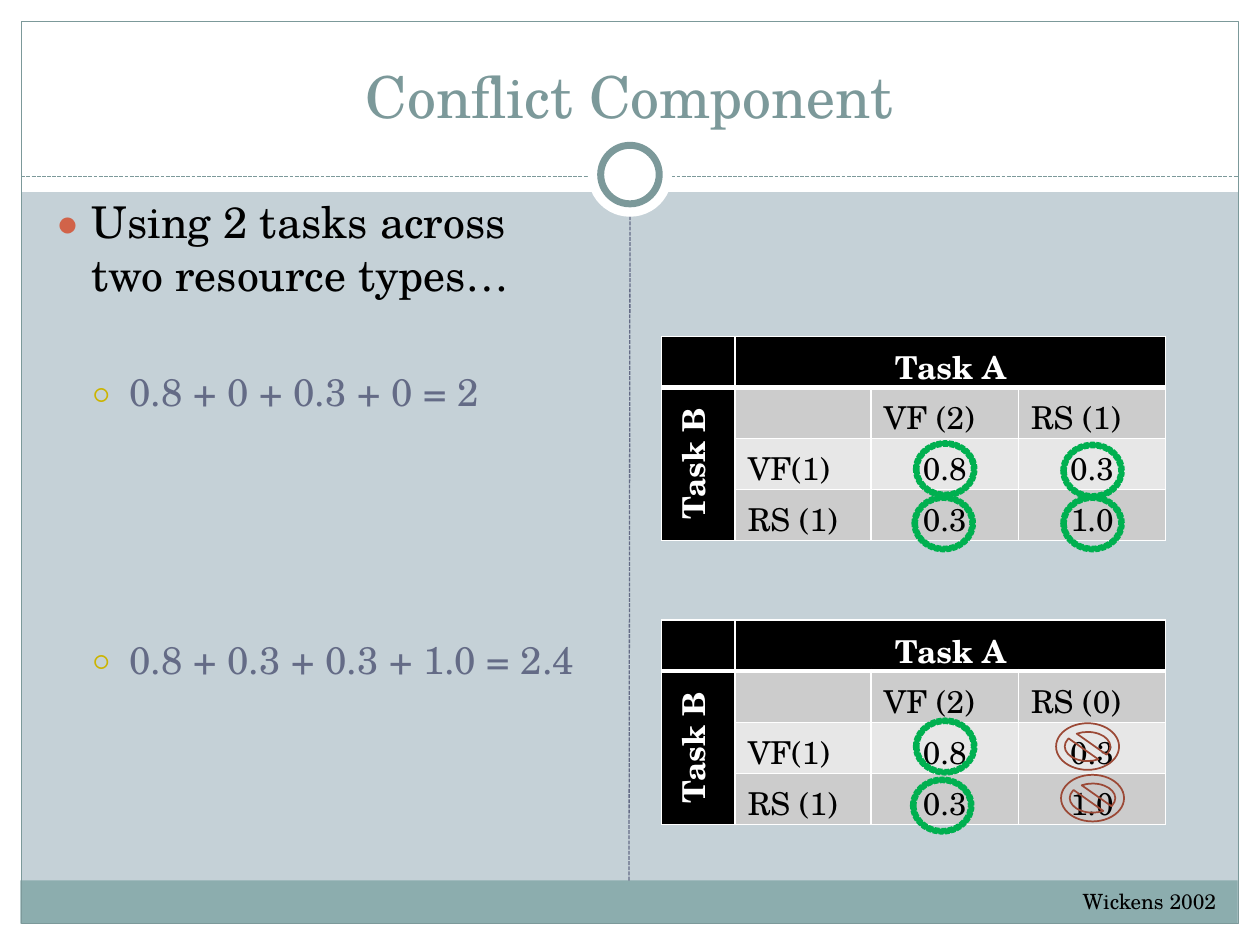
from lxml import etree
from pptx import Presentation
from pptx.dml.color import RGBColor
from pptx.enum.dml import MSO_LINE
from pptx.enum.shapes import MSO_CONNECTOR, MSO_SHAPE
from pptx.enum.text import MSO_ANCHOR, PP_ALIGN
from pptx.oxml.ns import qn
from pptx.util import Cm, Pt

RECT, OVAL = MSO_SHAPE.RECTANGLE, MSO_SHAPE.OVAL
DONUT, NO_SIGN = MSO_SHAPE.DONUT, MSO_SHAPE.NO_SYMBOL
STRAIGHT, DASH = MSO_CONNECTOR.STRAIGHT, MSO_LINE.SQUARE_DOT
LEFT, CENTER, RIGHT = PP_ALIGN.LEFT, PP_ALIGN.CENTER, PP_ALIGN.RIGHT
TOP, BOTTOM = MSO_ANCHOR.TOP, MSO_ANCHOR.BOTTOM

FONT = "TeX Gyre Schola"
COLORS = {
    "back": "C5D1D7", "white": "FFFFFF", "black": "000000",
    "teal": "7C999A", "footer": "8CADAE", "slate": "646B86",
    "orange": "D16349", "gold": "CCB400", "green": "00B050",
    "brown": "9B4936", "dark_band": "CCCCCC", "light_band": "E7E7E7",
}
RGB = {name: RGBColor.from_string(value) for name, value in COLORS.items()}


def add_text(p, text, size=18, color="black", bold=False, align=LEFT, before=0):
    p.alignment = align
    p.space_before = Pt(before)
    r = p.add_run()
    r.text = text
    r.font.name = FONT
    r.font.size = Pt(size)
    r.font.bold = bold
    r.font.color.rgb = RGB[color]


def add_figure(kind, x, y, w, h, fill=None, line=None, width=1, dash=None):
    sp = s.shapes.add_shape(kind, Cm(x), Cm(y), Cm(w), Cm(h))
    sp.shadow.inherit = False
    if fill:
        sp.fill.solid()
        sp.fill.fore_color.rgb = RGB[fill]
    else:
        sp.fill.background()
    if line:
        sp.line.color.rgb = RGB[line]
        sp.line.width = Pt(width)
        sp.line.dash_style = dash
    else:
        sp.line.fill.background()
    return sp


prs = Presentation()
prs.slide_width, prs.slide_height = Cm(25.4), Cm(19.05)
s = prs.slides.add_slide(prs.slide_layouts[6])
s.background.fill.solid()
s.background.fill.fore_color.rgb = RGB["back"]

for x, y, w, h in [(0, 18.62, 25.4, 0.43), (0, 0, 25.4, 3.87),
                   (0, 0, 0.43, 19.05), (24.97, 0, 0.43, 19.05)]:
    add_figure(RECT, x, y, w, h, fill="white")
footer = add_figure(RECT, 0.41, 17.75, 24.54, 0.87, fill="footer")
add_figure(RECT, 0.43, 0.43, 24.54, 18.19, line="teal", width=0.75)

rule = s.shapes.add_connector(STRAIGHT, Cm(0.43), Cm(3.56), Cm(24.97), Cm(3.56))
add_figure(OVAL, 11.85, 2.67, 1.7, 1.7, fill="white")
add_figure(OVAL, 12.11, 2.93, 1.18, 1.18, fill="white", line="teal", width=4)
divider = s.shapes.add_connector(STRAIGHT, Cm(12.68), Cm(17.75), Cm(12.7), Cm(4.37))
divider.begin_connect(footer, 0)
for line, color in [(rule, "teal"), (divider, "slate")]:
    line.line.color.rgb = RGB[color]
    line.line.width = Pt(0.75)
    line.line.dash_style = DASH
    etree.SubElement(line._element.spPr, qn("a:effectLst"))

frames = []
for x, y, w, h, anchor in [(0.84, 0.64, 23.7, 2.11, BOTTOM),
                           (0.84, 3.81, 11.23, 13, TOP),
                           (21.39, 17.78, 3.38, 0.76, TOP)]:
    tf = s.shapes.add_textbox(Cm(x), Cm(y), Cm(w), Cm(h)).text_frame
    tf.word_wrap = True
    tf.vertical_anchor = anchor
    frames.append(tf)
title, body, credit = frames
add_text(title.paragraphs[0], "Conflict Component", size=33, color="teal", align=CENTER)
add_text(credit.paragraphs[0], "Wickens 2002", size=12, align=RIGHT)

bullets = [
    ("Using 2 tasks across two resource types…", 25, "black", 0, 0, "●", "orange", 85),
    ("0.8 + 0 + 0.3 + 0 = 2", 22, "slate", 39, 1, "○", "gold", 70),
    ("0.8 + 0.3 + 0.3 + 1.0 = 2.4", 22, "slate", 126.5, 1, "○", "gold", 70),
]
for i, (text, size, color, before, level, mark, mark_color, scale) in enumerate(bullets):
    p = body.add_paragraph() if i else body.paragraphs[0]
    add_text(p, text, size=size, color=color, before=before)
    p.level = level
    pPr = p._p.get_or_add_pPr()
    pPr.set("marL", str(Cm(0.76 * (level + 1))))
    pPr.set("indent", str(-Cm(0.76)))
    buClr = etree.SubElement(pPr, qn("a:buClr"))
    etree.SubElement(buClr, qn("a:srgbClr"), val=COLORS[mark_color])
    etree.SubElement(pPr, qn("a:buSzPct"), val=str(scale * 1000))
    etree.SubElement(pPr, qn("a:buFont"), typeface=FONT)
    etree.SubElement(pPr, qn("a:buChar"), char=mark)

for top, last_head in [(12.5, "RS (0)"), (6.78, "RS (1)")]:
    rows = [
        ["", "Task A", "", ""],
        ["Task B", "", "VF (2)", last_head],
        ["", "VF(1)", "0.8", "0.3"],
        ["", "RS (1)", "0.3", "1.0"],
    ]
    table = s.shapes.add_table(4, 4, Cm(13.34), Cm(top), Cm(10.16), Cm(4.12)).table
    for col, width in zip(table.columns, [1.48, 2.74, 2.97, 2.97]):
        col.width = Cm(width)
    for row in table.rows:
        row.height = Cm(1.03)
    table.cell(0, 1).merge(table.cell(0, 3))
    table.cell(1, 0).merge(table.cell(3, 0))
    for i, values in enumerate(rows):
        for j, text in enumerate(values):
            cell = table.cell(i, j)
            head = i == 0 or j == 0
            tcPr = cell._tc.get_or_add_tcPr()
            for side in ("L", "R", "T", "B"):
                thick = (side == "B" and i == 0) or (side == "T" and i == 1)
                ln = etree.SubElement(tcPr, qn(f"a:ln{side}"), w=str(Pt(3 if thick else 1)))
                fill = etree.SubElement(ln, qn("a:solidFill"))
                etree.SubElement(fill, qn("a:srgbClr"), val=COLORS["white"])
            cell.fill.solid()
            band = "light_band" if i == 2 else "dark_band"
            cell.fill.fore_color.rgb = RGB["black" if head else band]
            if text:
                centered = head or (i > 1 and j > 1)
                add_text(cell.text_frame.paragraphs[0], text, bold=head,
                         color="white" if head else "black",
                         align=CENTER if centered else LEFT)
    table.cell(1, 0)._tc.tcPr.set("vert", "vert270")

for x, y in [(18.42, 14.48), (18.36, 15.67), (18.42, 8.89),
             (21.39, 8.92), (21.39, 9.98), (18.39, 9.98)]:
    sp = add_figure(DONUT, x, y, 1.27, 1.14, fill="green", line="green", width=0.9, dash=DASH)
    sp.adjustments[0] = 0.09
for x, y in [(21.39, 15.62), (21.29, 14.58)]:
    add_figure(NO_SIGN, x, y, 1.27, 0.94, line="brown")

prs.save("out.pptx")
